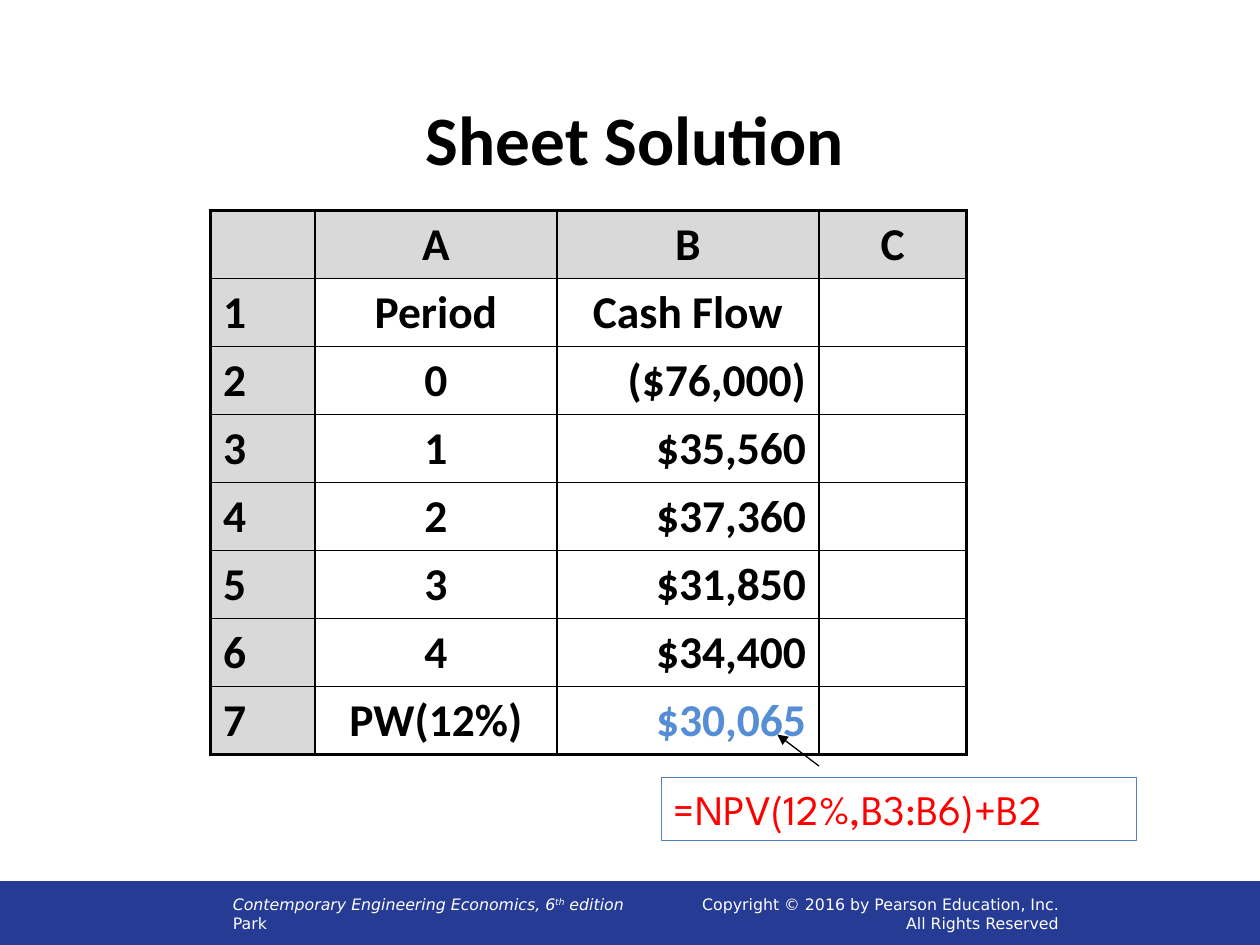
import dataclasses

import lxml.etree
import pptx
import pptx.dml.color
import pptx.enum.shapes
import pptx.enum.text
import pptx.oxml.ns
import pptx.util

Inches = pptx.util.Inches
ALIGN = pptx.enum.text.PP_ALIGN
ANCHOR = pptx.enum.text.MSO_ANCHOR
SHAPES = pptx.enum.shapes


@dataclasses.dataclass(frozen=True)
class Theme:
    """Colours, fonts and type sizes of the slide."""
    ink: str = "000000"
    paper: str = "FFFFFF"
    band: str = "263B94"
    header: str = "D9D9D9"
    result: str = "558ED5"
    outline: str = "4F81BD"
    formula: str = "FF0000"
    main_font: str = "Calibri"
    footer_font: str = "DejaVu Sans"
    formula_font: str = "League Spartan"
    title_size: float = 39.6
    table_size: float = 26
    formula_size: float = 24
    footer_size: float = 9
    thin: float = 0.75
    grid: float = 1
    frame: float = 2.25


THEME = Theme()
COLUMN_WIDTHS = (0.83, 1.92, 2.08, 1.17)
ROW_HEIGHT = 0.54
SHEET = (
    ("", "A", "B", "C"),
    ("1", "Period", "Cash Flow", ""),
    ("2", "0", "($76,000)", ""),
    ("3", "1", "$35,560", ""),
    ("4", "2", "$37,360", ""),
    ("5", "3", "$31,850", ""),
    ("6", "4", "$34,400", ""),
    ("7", "PW(12%)", "$30,065", ""),
)


def colour(code):
    """Turn a hex code into a colour."""
    return pptx.dml.color.RGBColor.from_string(code)


def add_span(para, text, font, size, ink, bold=False, italic=False, raised=False):
    """Add one formatted run to a paragraph."""
    span = para.add_run()
    span.text = text
    span.font.name = font
    span.font.size = pptx.util.Pt(size)
    span.font.color.rgb = colour(ink)
    span.font.bold = bold
    span.font.italic = italic
    if raised:
        span.font._element.set("baseline", "30000")


def add_text(page, left, top, width, height):
    """Add a wrapping, vertically centred text box and return its frame."""
    box = page.shapes.add_textbox(Inches(left), Inches(top), Inches(width), Inches(height))
    box.text_frame.word_wrap = True
    box.text_frame.vertical_anchor = ANCHOR.MIDDLE
    return box.text_frame


def add_rectangle(page, left, top, width, height, line, fill=None):
    """Add a rectangle with a thin outline and an optional fill."""
    box = page.shapes.add_shape(SHAPES.MSO_SHAPE.RECTANGLE, Inches(left), Inches(top),
                                Inches(width), Inches(height))
    box.shadow.inherit = False
    box.line.color.rgb = colour(line)
    box.line.width = pptx.util.Pt(THEME.thin)
    if fill:
        box.fill.solid()
        box.fill.fore_color.rgb = colour(fill)
    else:
        box.fill.background()
    return box


def add_footer(page):
    """Add the footer band with the book title and the copyright line."""
    add_rectangle(page, 0, 7, 10.01, 0.5, THEME.band, THEME.band)
    style = (THEME.footer_font, THEME.footer_size, THEME.paper)
    book = add_text(page, 1.75, 7, 6.16, 0.5)
    para = book.paragraphs[0]
    add_span(para, "Contemporary Engineering Economics, 6", *style, italic=True)
    add_span(para, "th", *style, italic=True, raised=True)
    add_span(para, " edition", *style, italic=True)
    add_span(book.add_paragraph(), "Park", *style)
    rights = add_text(page, 4.92, 7, 3.58, 0.5)
    owner, reserved = rights.paragraphs[0], rights.add_paragraph()
    add_span(owner, "Copyright © 2016 by Pearson Education, Inc.", *style)
    add_span(reserved, "All Rights Reserved", *style)
    owner.alignment = reserved.alignment = ALIGN.RIGHT


def add_title(page, text):
    """Add the centred slide title."""
    para = add_text(page, 0.5, 0.77, 9.08, 0.65).paragraphs[0]
    para.alignment = ALIGN.CENTER
    add_span(para, text, THEME.main_font, THEME.title_size, THEME.ink, bold=True)


def set_borders(cell, outer_sides):
    """Draw the cell borders, heavier on the sides that face outwards."""
    properties = cell._tc.get_or_add_tcPr()
    for side, outer in zip("LRTB", outer_sides):
        width = pptx.util.Pt(THEME.frame if outer else THEME.grid)
        line = lxml.etree.SubElement(properties, pptx.oxml.ns.qn(f"a:ln{side}"), w=str(width))
        fill = lxml.etree.SubElement(line, pptx.oxml.ns.qn("a:solidFill"))
        lxml.etree.SubElement(fill, pptx.oxml.ns.qn("a:srgbClr"), val=THEME.ink)


def cell_alignment(row, column):
    """Choose the alignment of a cell from its place in the sheet."""
    if column == 0:
        return ALIGN.LEFT
    return ALIGN.RIGHT if column == 2 and row > 1 else ALIGN.CENTER


def add_sheet(page):
    """Add the spreadsheet table."""
    last_row, last_column = len(SHEET) - 1, len(COLUMN_WIDTHS) - 1
    table = page.shapes.add_table(len(SHEET), len(COLUMN_WIDTHS), Inches(1.67), Inches(1.67),
                                  Inches(sum(COLUMN_WIDTHS)),
                                  Inches(ROW_HEIGHT * len(SHEET))).table
    for column, width in zip(table.columns, COLUMN_WIDTHS):
        column.width = Inches(width)
    for row, texts in enumerate(SHEET):
        table.rows[row].height = Inches(ROW_HEIGHT)
        for column, text in enumerate(texts):
            cell = table.cell(row, column)
            set_borders(cell, (column == 0, column == last_column, row == 0, row == last_row))
            cell.fill.solid()
            is_header = row == 0 or column == 0
            cell.fill.fore_color.rgb = colour(THEME.header if is_header else THEME.paper)
            if text:
                para = cell.text_frame.paragraphs[0]
                para.alignment = cell_alignment(row, column)
                ink = THEME.result if (row, column) == (last_row, 2) else THEME.ink
                add_span(para, text, THEME.main_font, THEME.table_size, ink, bold=True)


def add_formula(page, text):
    """Add the outlined formula."""
    frame = add_rectangle(page, 5.25, 6.17, 3.77, 0.5, THEME.outline).text_frame
    frame.word_wrap = True
    frame.vertical_anchor = ANCHOR.TOP
    para = frame.paragraphs[0]
    para.alignment = ALIGN.LEFT
    add_span(para, text, THEME.formula_font, THEME.formula_size, THEME.formula)


def add_arrow(page, start, end):
    """Add a thin arrow pointing at its end."""
    arrow = page.shapes.add_connector(SHAPES.MSO_CONNECTOR.STRAIGHT,
                                      *map(Inches, start + end))
    arrow.line.color.rgb = colour(THEME.ink)
    arrow.line.width = pptx.util.Pt(THEME.thin)
    line = arrow.line._get_or_add_ln()
    lxml.etree.SubElement(line, pptx.oxml.ns.qn("a:tailEnd"), type="triangle")
    lxml.etree.SubElement(arrow._element.spPr, pptx.oxml.ns.qn("a:effectLst"))


def main():
    """Build and save the slide."""
    deck = pptx.Presentation()
    deck.slide_width, deck.slide_height = Inches(10), Inches(7.5)
    page = deck.slides.add_slide(deck.slide_layouts[6])
    add_footer(page)
    add_title(page, "Sheet Solution")
    add_sheet(page)
    add_formula(page, "=NPV(12%,B3:B6)+B2")
    add_arrow(page, (6.5, 6.08), (6.17, 5.83))
    deck.save("out.pptx")


if __name__ == "__main__":
    main()
